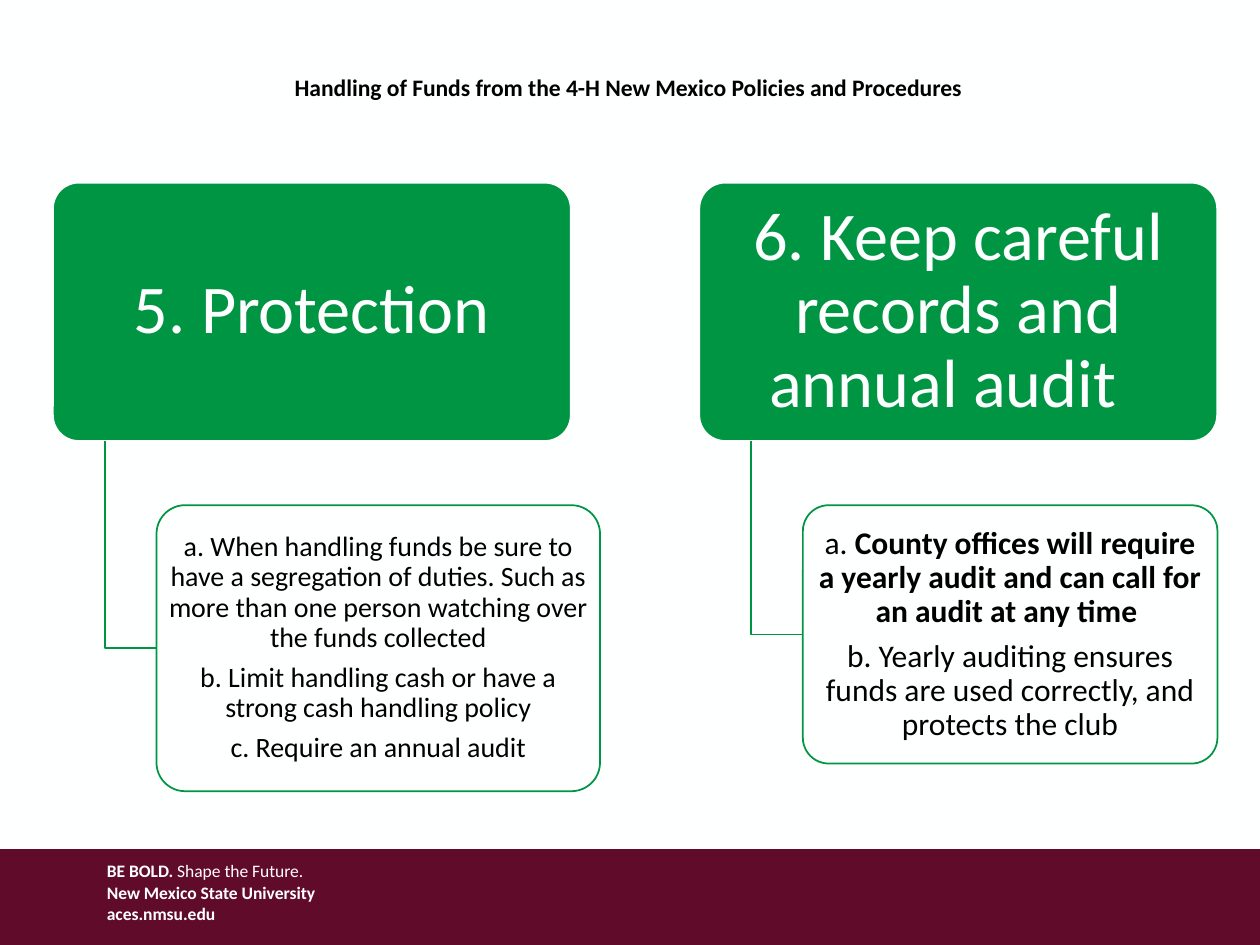
from pptx import Presentation
from pptx.dml.color import RGBColor
from pptx.enum.shapes import MSO_SHAPE
from pptx.enum.text import MSO_ANCHOR, PP_ALIGN
from pptx.util import Pt

RECT, ROUND = MSO_SHAPE.RECTANGLE, MSO_SHAPE.ROUNDED_RECTANGLE
TOP, MIDDLE = MSO_ANCHOR.TOP, MSO_ANCHOR.MIDDLE
LEFT, CENTER = PP_ALIGN.LEFT, PP_ALIGN.CENTER

HEX = {"paper": "FEFFFF", "green": "009543", "maroon": "610B2B",
       "black": "000000", "white": "FFFFFF"}

TITLE = [[("Handling of Funds from the 4-H New Mexico Policies and Procedures", True)]]
FOOTER = [
    [("BE BOLD. ", True), ("Shape the Future.", False)],
    [("New Mexico State University", True)],
    [("aces.nmsu.edu", True)],
]
TOPICS = [
    {"head": "5. Protection", "left": 30.24, "wide": 253.44, "high": 163.44,
     "size": 16, "inset": (2.16, 1.44),
     "body": [
         [("a. When handling funds be sure to have a segregation of duties. "
           "Such as more than one person watching over the funds collected", False)],
         [("b. Limit handling cash or have a strong cash handling policy", False)],
         [("c. Require an annual audit", False)],
     ]},
    {"head": "6. Keep careful records and annual audit\t", "left": 399.6,
     "wide": 236.88, "high": 147.6, "size": 18, "inset": (2.88, 2.16),
     "body": [
         [("a. ", False),
          ("County offices will require a yearly audit and can call for "
           "an audit at any time ", True)],
         [("b. Yearly auditing ensures funds are used correctly, "
           "and protects the club", False)],
     ]},
]
CARD_TOP, CARD_WIDE, CARD_HIGH = 104.4, 295.92, 147.6
BODY_TOP = 288.72
BAR_TOP, WIDE, HIGH = 485.28, 720, 540


def color(name):
    return RGBColor.from_string(HEX[name])


def write(shape, text, size, ink, align=LEFT, anchor=TOP, wrap=True,
          inset=(7.2, 3.6), lines=None, gap=0):
    frame = shape.text_frame
    frame.word_wrap = wrap
    frame.vertical_anchor = anchor
    frame.margin_left = frame.margin_right = Pt(inset[0])
    frame.margin_top = frame.margin_bottom = Pt(inset[1])
    for i, parts in enumerate(text):
        para = frame.add_paragraph() if i else frame.paragraphs[0]
        para.alignment = align
        para.line_spacing = lines
        if gap and i < len(text) - 1:
            para.space_after = Pt(gap)
        for words, bold in parts:
            run = para.add_run()
            run.text = words
            font = run.font
            font.name, font.size, font.bold = "Calibri", Pt(size), bold
            font.color.rgb = color(ink)


def block(kind, left, top, wide, high, fill, line=None):
    shape = slide.shapes.add_shape(kind, Pt(left), Pt(top), Pt(wide), Pt(high))
    shape.shadow.inherit = False
    shape.fill.solid()
    shape.fill.fore_color.rgb = color(fill)
    if line:
        shape.adjustments[0] = 0.1
        shape.line.color.rgb = color(line)
        shape.line.width = Pt(1)
    else:
        shape.line.fill.background()
    return shape


def elbow(left, top, right, base):
    path = slide.shapes.build_freeform(Pt(left), Pt(top))
    path.add_line_segments([(Pt(left), Pt(base)), (Pt(right), Pt(base))], close=False)
    shape = path.convert_to_shape()
    shape.shadow.inherit = False
    shape.fill.background()
    shape.line.color.rgb = color("green")
    shape.line.width = Pt(1)


def textbox(left, top, wide, high):
    return slide.shapes.add_textbox(Pt(left), Pt(top), Pt(wide), Pt(high))


deck = Presentation()
deck.slide_width, deck.slide_height = Pt(WIDE), Pt(HIGH)
slide = deck.slides.add_slide(deck.slide_layouts[6])
slide.background.fill.solid()
slide.background.fill.fore_color.rgb = color("paper")

block(RECT, 0, BAR_TOP, WIDE, HIGH - BAR_TOP, "maroon")
write(textbox(54, 488.16, 207.36, 59.04), FOOTER, 10, "white")
write(textbox(161.28, 38.16, 403.2, 23.76), TITLE, 13.5, "black", wrap=False)

for topic in TOPICS:
    left, step = topic["left"], CARD_WIDE / 10
    card = block(ROUND, left, CARD_TOP, CARD_WIDE, CARD_HIGH, "green", "paper")
    write(card, [[(topic["head"], False)]], 39, "paper", align=CENTER,
          anchor=MIDDLE, inset=(5.76, 3.6), lines=0.9)
    elbow(left + step, CARD_TOP + CARD_HIGH, left + 2 * step,
          BODY_TOP + topic["high"] / 2)
    body = block(ROUND, left + 2 * step, BODY_TOP, topic["wide"], topic["high"],
                 "paper", "green")
    write(body, topic["body"], topic["size"], "black", align=CENTER,
          anchor=MIDDLE, inset=topic["inset"], lines=0.9, gap=topic["size"] * 0.35)

deck.save("out.pptx")
